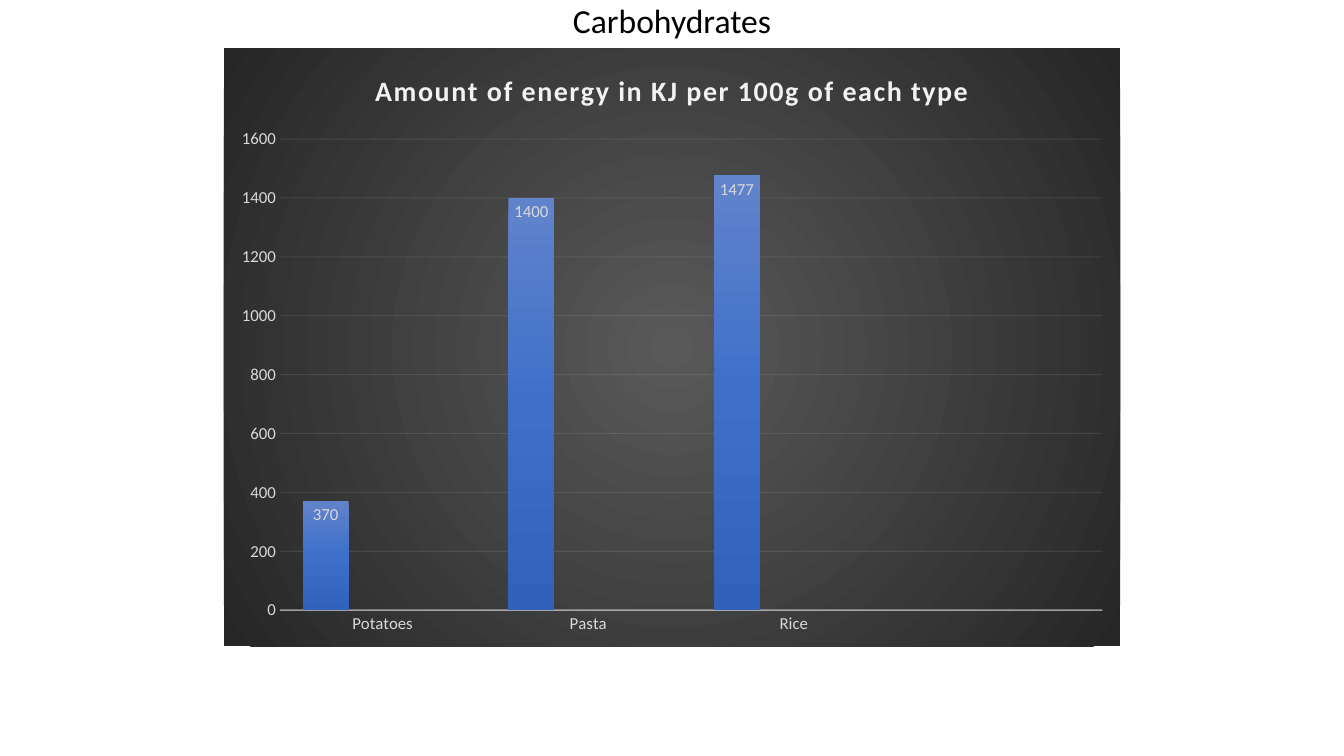
from lxml import etree
from pptx import Presentation
from pptx.chart.data import CategoryChartData
from pptx.dml.color import RGBColor
from pptx.enum.chart import XL_CHART_TYPE as ChartType, XL_LABEL_POSITION as LabelPosition
from pptx.enum.chart import XL_TICK_MARK as TickMark
from pptx.enum.text import PP_ALIGN as Align
from pptx.oxml import parse_xml
from pptx.oxml.ns import nsdecls, qn
from pptx.util import Inches, Pt

HEADING = "Carbohydrates"
CHART_TITLE = "Amount of energy in KJ per 100g of each type"
CATEGORIES = ["Potatoes", "Pasta", "Rice", ""]
SERIES = {
    "Series 1": [370, 1400, 1477, None],
    "Series 2": [None] * 4,
    "Series 3": [None] * 4,
}
SLIDE_SIZE = (Inches(13.33), Inches(7.5))
CHART_BOX = [Inches(n) for n in (2.22, 0.48, 8.89, 5.93)]
THEME = {
    "font": "Calibri",
    "heading": (24, "000000"),
    "title": (20, "F2F2F2"),
    "label": (12, "D9D9D9"),
    "rule": "F2F2F2",
    "background": ["595959", "262626"],
    "series": [
        ["6183CB", "3E70CA", "3062BB"],
        ["F18C57", "F67B28", "E56C19"],
        ["AFAFAF", "A5A5A5", "939393"],
    ],
}
RADIAL = '<a:path path="circle"><a:fillToRect l="50000" t="50000" r="50000" b="50000"/></a:path>'
VERTICAL = '<a:lin ang="5400000" scaled="0"/>'


def style_font(font, role):
    size, color = THEME[role]
    font.name = THEME["font"]
    font.size = Pt(size)
    font.color.rgb = RGBColor.from_string(color)


def gradient(colors, direction):
    step = 100000 // (len(colors) - 1)
    stops = "".join(
        f'<a:gs pos="{index * step}"><a:srgbClr val="{color}"/></a:gs>'
        for index, color in enumerate(colors)
    )
    return parse_xml(
        f'<a:gradFill {nsdecls("a")} rotWithShape="1"><a:gsLst>{stops}</a:gsLst>{direction}</a:gradFill>'
    )


def style_line(line, width):
    line.width = Pt(width)
    line.color.rgb = RGBColor.from_string(THEME["rule"])


def set_opacity(chart, line_location, percent):
    for color in chart.element.xpath(f".//{line_location}/c:spPr/a:ln//a:srgbClr"):
        etree.SubElement(color, qn("a:alpha")).set("val", str(percent * 1000))


def add_heading(slide):
    frame = slide.shapes.add_textbox(0, 0, *SLIDE_SIZE).text_frame
    frame.word_wrap = True
    paragraph = frame.paragraphs[0]
    paragraph.text = HEADING
    paragraph.alignment = Align.CENTER
    paragraph.line_spacing = 0.9
    style_font(paragraph.font, "heading")


def add_energy_chart(slide):
    data = CategoryChartData()
    data.categories = CATEGORIES
    for name, values in SERIES.items():
        data.add_series(name, values)
    chart = slide.shapes.add_chart(ChartType.COLUMN_CLUSTERED, *CHART_BOX, data).chart
    chart.has_legend = False
    style_font(chart.font, "label")
    style_title(chart)
    style_axes(chart)
    style_columns(chart)
    background = parse_xml(f'<c:spPr {nsdecls("c", "a")}><a:ln><a:noFill/></a:ln></c:spPr>')
    background.insert(0, gradient(THEME["background"], RADIAL))
    chart.element.find(qn("c:chart")).addnext(background)


def style_title(chart):
    chart.has_title = True
    chart.chart_title.include_in_layout = False
    paragraph = chart.chart_title.text_frame.paragraphs[0]
    paragraph.text = CHART_TITLE
    font = paragraph.runs[0].font
    style_font(font, "title")
    font.bold = True
    for properties in chart.element.xpath(".//c:title//a:r/a:rPr"):
        properties.set("spc", "100")


def style_axes(chart):
    categories, values = chart.category_axis, chart.value_axis
    for axis in (categories, values):
        axis.major_tick_mark = axis.minor_tick_mark = TickMark.NONE
        style_font(axis.tick_labels.font, "label")
    style_line(categories.format.line, 1)
    values.format.line.fill.background()
    values.minimum_scale, values.maximum_scale, values.major_unit = 0, 1600, 200
    values.has_major_gridlines = True
    style_line(values.major_gridlines.format.line, 0.75)
    set_opacity(chart, "c:catAx", 54)
    set_opacity(chart, "c:majorGridlines", 10)


def style_columns(chart):
    plot = chart.plots[0]
    plot.gap_width = 100
    plot.overlap = -24
    plot.vary_by_categories = False
    for series in plot.series:
        series.format.fill.background()
        labels = series.data_labels
        labels.show_value = True
        labels.position = LabelPosition.INSIDE_END
        style_font(labels.font, "label")
    fills = chart.element.xpath(".//c:ser/c:spPr/a:noFill")
    for fill, colors in zip(fills, THEME["series"]):
        fill.getparent().replace(fill, gradient(colors, VERTICAL))


def main():
    presentation = Presentation()
    presentation.slide_width, presentation.slide_height = SLIDE_SIZE
    slide = presentation.slides.add_slide(presentation.slide_layouts[6])
    add_heading(slide)
    add_energy_chart(slide)
    presentation.save("out.pptx")


if __name__ == "__main__":
    main()
